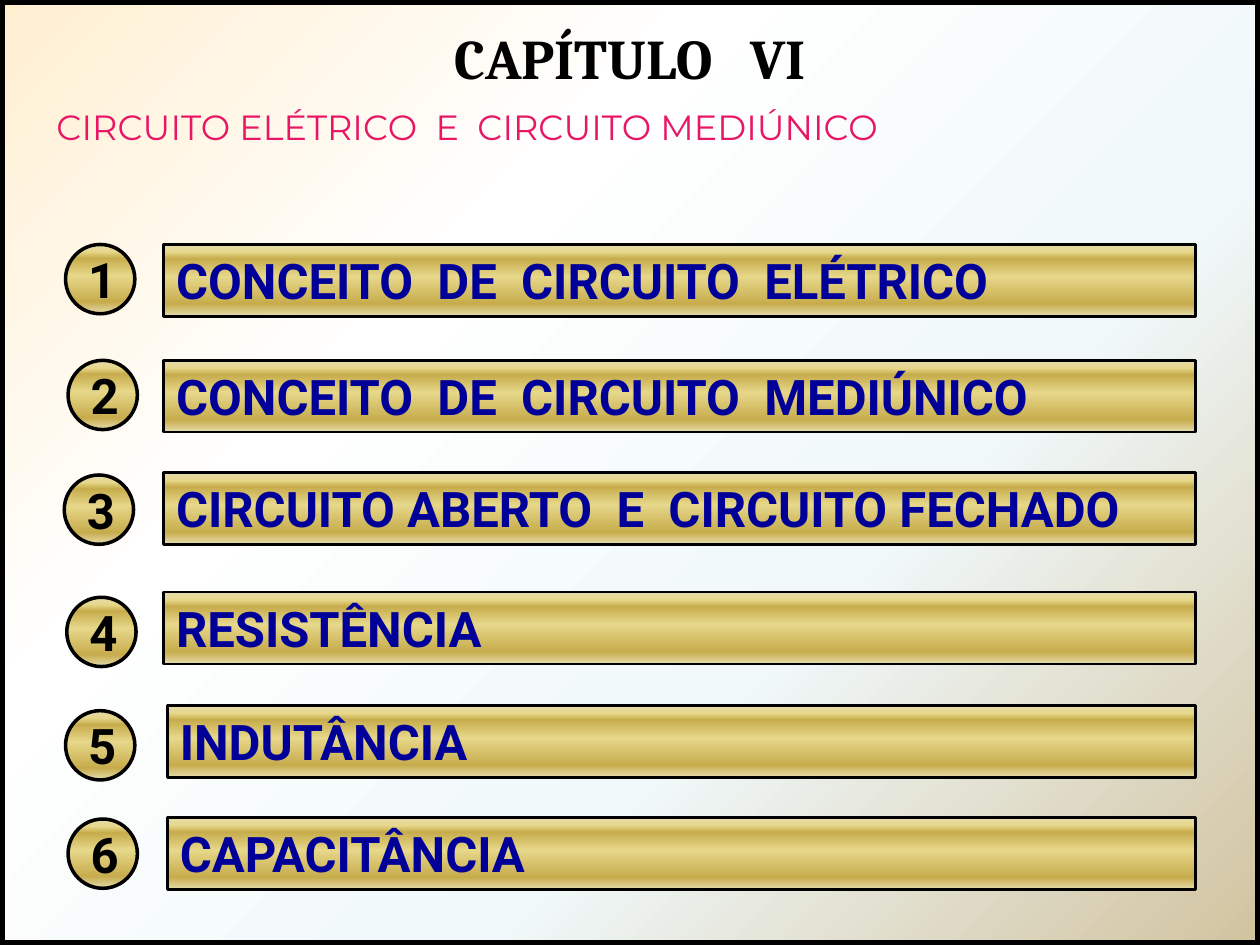
"""Build the chapter VI topic slide."""
from dataclasses import dataclass
from typing import NamedTuple, Optional

from lxml import etree
from pptx import Presentation
from pptx.dml.color import RGBColor
from pptx.enum import shapes, text
from pptx.oxml import ns
from pptx.util import Inches, Pt


class Stop(NamedTuple):
    """A gradient stop, with position and opacity in percent."""
    position: int
    color: str
    opacity: int = 100


class Gradient(NamedTuple):
    """Stops along a direction in clockwise degrees."""
    angle: int
    stops: tuple[Stop, ...]


class Outline(NamedTuple):
    """A text outline with its width in points."""
    color: str
    width: float


class Topic(NamedTuple):
    """A numbered topic with the places of its bar and badge."""
    title: str
    bar_left: float
    bar_top: float
    badge_left: float
    badge_top: float


@dataclass(frozen=True)
class Theme:
    """Colours, fonts and sizes of the slide."""
    ink: str = "000000"
    topic_ink: str = "000099"
    heading_font: str = "Cambria"
    subtitle_font: str = "Montserrat"
    topic_font: str = "Roboto"
    heading_size: int = 32
    subtitle_size: int = 20
    topic_size: int = 28
    badge_outline: Outline = Outline("FFFFFF", 0.75)
    subtitle_outline: Outline = Outline("000000", 1)
    backdrop: Gradient = Gradient(45, (
        Stop(0, "FFEFD1"), Stop(32, "FFFFFF", 73), Stop(65, "F0F8F9", 62), Stop(100, "D1C39F")))
    gold: Gradient = Gradient(90, (
        Stop(0, "E6DCAC"), Stop(11, "E6D78A"), Stop(20, "C7AC4C"),
        Stop(45, "E6D78A"), Stop(83, "C7AC4C"), Stop(100, "E6DCAC")))
    rainbow: Gradient = Gradient(0, (
        Stop(0, "A603AB"), Stop(12, "E81766"), Stop(27, "EE3F17"), Stop(48, "FFFF00"),
        Stop(65, "1A8D48"), Stop(79, "0819FB"), Stop(100, "A603AB")))


THEME = Theme()
BAR_RIGHT, BAR_HEIGHT, BADGE_SIZE = 9.49, 0.57, 0.55
TOPICS = (
    Topic("CONCEITO  DE  CIRCUITO  ELÉTRICO", 1.3, 1.94, 0.52, 1.94),
    Topic("CONCEITO  DE  CIRCUITO  MEDIÚNICO", 1.3, 2.86, 0.54, 2.86),
    Topic("CIRCUITO ABERTO  E  CIRCUITO FECHADO", 1.3, 3.75, 0.51, 3.77),
    Topic("RESISTÊNCIA", 1.3, 4.7, 0.53, 4.74),
    Topic("INDUTÂNCIA", 1.33, 5.6, 0.52, 5.64),
    Topic("CAPACITÂNCIA", 1.33, 6.49, 0.54, 6.5),
)


def add_color(parent, color: str, opacity: int = 100) -> None:
    """Append a colour with its opacity to an XML element."""
    tint = etree.SubElement(parent, ns.qn("a:srgbClr"), val=color)
    if opacity < 100:
        etree.SubElement(tint, ns.qn("a:alpha"), val=str(opacity * 1000))


def apply_gradient(fill, owner, gradient: Gradient) -> None:
    """Give a fill, the first gradient inside owner, all its stops."""
    fill.gradient()
    fill.gradient_angle = -gradient.angle % 360
    stop_list = next(owner.iter(ns.qn("a:gsLst")))
    for default_stop in list(stop_list):
        stop_list.remove(default_stop)
    for stop in gradient.stops:
        mark = etree.SubElement(stop_list, ns.qn("a:gs"), pos=str(stop.position * 1000))
        add_color(mark, stop.color, stop.opacity)


def write(shape, wording: str, *, font: str, size: int, color: str = THEME.ink,
          gradient: Optional[Gradient] = None, outline: Optional[Outline] = None,
          bold: bool = True, align=text.PP_ALIGN.LEFT, anchor=text.MSO_ANCHOR.TOP,
          wrap: bool = True, grow: bool = False) -> None:
    """Put one formatted paragraph into a shape."""
    frame = shape.text_frame
    frame.word_wrap = wrap
    frame.vertical_anchor = anchor
    frame.auto_size = text.MSO_AUTO_SIZE.SHAPE_TO_FIT_TEXT if grow else text.MSO_AUTO_SIZE.NONE
    paragraph = frame.paragraphs[0]
    paragraph.alignment = align
    run = paragraph.add_run()
    run.text = wording
    run.font.name, run.font.size, run.font.bold = font, Pt(size), bold
    properties = next(shape.element.iter(ns.qn("a:rPr")))
    if gradient:
        apply_gradient(run.font.fill, properties, gradient)
    else:
        run.font.color.rgb = RGBColor.from_string(color)
    if outline:
        stroke = etree.Element(ns.qn("a:ln"), w=str(Pt(outline.width)))
        add_color(etree.SubElement(stroke, ns.qn("a:solidFill")), outline.color)
        properties.insert(0, stroke)


def add_box(slide, kind, left: float, top: float, width: float, height: float,
            line_width: float, gradient: Optional[Gradient] = None):
    """Draw an outlined shape, filled with a gradient if one is given."""
    box = slide.shapes.add_shape(kind, Inches(left), Inches(top), Inches(width), Inches(height))
    box.shadow.inherit = False
    if gradient:
        apply_gradient(box.fill, box.element, gradient)
    else:
        box.fill.background()
    box.line.color.rgb = RGBColor.from_string(THEME.ink)
    box.line.width = Pt(line_width)
    return box


def add_topic(slide, number: int, topic: Topic) -> None:
    """Draw a topic bar and its numbered badge."""
    bar = add_box(slide, shapes.MSO_SHAPE.RECTANGLE, topic.bar_left, topic.bar_top,
                  BAR_RIGHT - topic.bar_left, BAR_HEIGHT, 1.5, THEME.gold)
    write(bar, topic.title, font=THEME.topic_font, size=THEME.topic_size,
          color=THEME.topic_ink, grow=True)
    badge = add_box(slide, shapes.MSO_SHAPE.OVAL, topic.badge_left, topic.badge_top,
                    BADGE_SIZE, BADGE_SIZE, 2, THEME.gold)
    write(badge, str(number), font=THEME.topic_font, size=THEME.topic_size,
          outline=THEME.badge_outline, align=text.PP_ALIGN.CENTER,
          anchor=text.MSO_ANCHOR.MIDDLE)


def main() -> None:
    """Build and save the slide."""
    deck = Presentation()
    deck.slide_width, deck.slide_height = Inches(10), Inches(7.5)
    slide = deck.slides.add_slide(deck.slide_layouts[6])
    apply_gradient(slide.background.fill, slide.element, THEME.backdrop)
    add_box(slide, shapes.MSO_SHAPE.RECTANGLE, 0, 0, 10, 7.5, 6)
    heading = slide.shapes.add_textbox(Inches(0.12), Inches(0.14), Inches(9.76), Inches(0.64))
    write(heading, "CAPÍTULO   VI", font=THEME.heading_font, size=THEME.heading_size,
          align=text.PP_ALIGN.CENTER, grow=True)
    for number, topic in enumerate(TOPICS, start=1):
        add_topic(slide, number, topic)
    subtitle = slide.shapes.add_textbox(Inches(0.35), Inches(0.79), Inches(9.37), Inches(0.83))
    write(subtitle, "CIRCUITO ELÉTRICO  E  CIRCUITO MEDIÚNICO", font=THEME.subtitle_font,
          size=THEME.subtitle_size, gradient=THEME.rainbow, outline=THEME.subtitle_outline,
          bold=False, wrap=False)
    deck.save("out.pptx")


if __name__ == "__main__":
    main()
